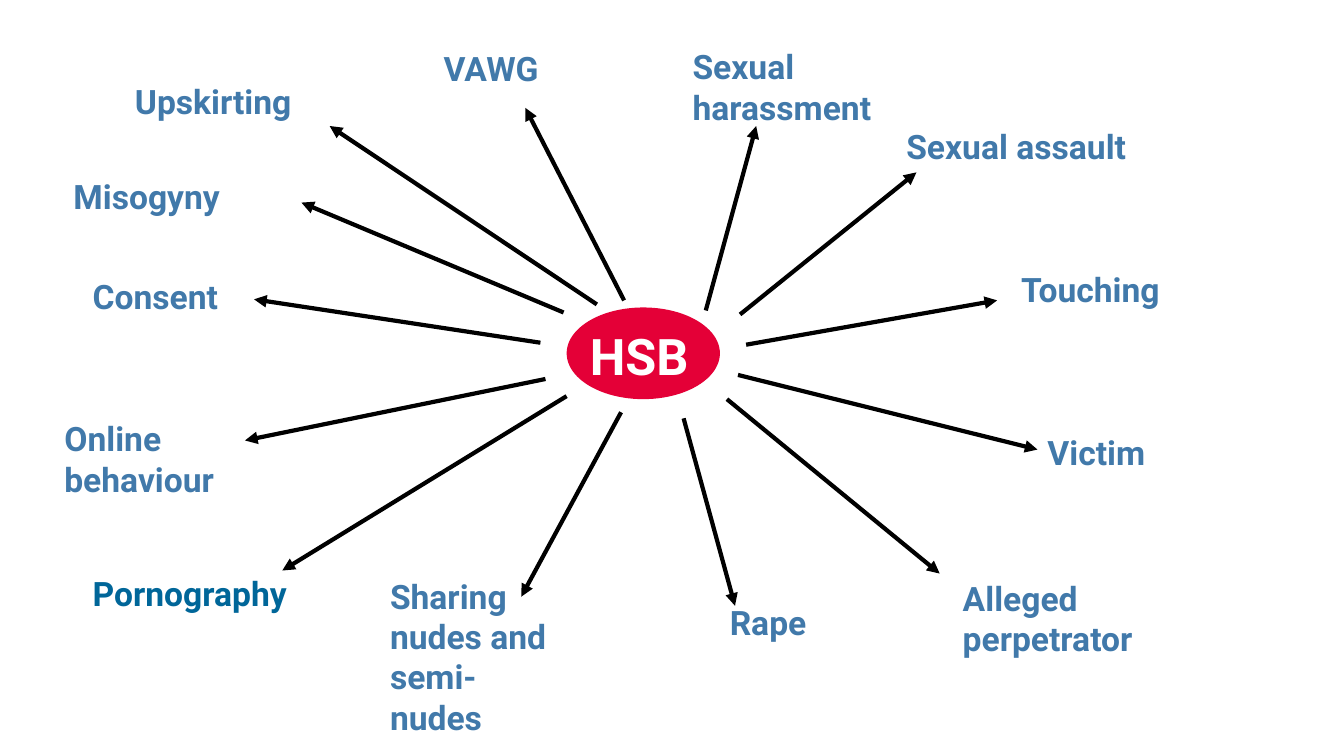
from dataclasses import dataclass
from pptx import Presentation
from pptx.dml.color import RGBColor
from pptx.enum.shapes import MSO_CONNECTOR, MSO_SHAPE
from pptx.enum.text import MSO_ANCHOR
from pptx.oxml.ns import qn
from pptx.util import Pt
from lxml import etree

PX = 9144
STRAIGHT = MSO_CONNECTOR.STRAIGHT
OVAL = MSO_SHAPE.OVAL
TOP, MIDDLE = MSO_ANCHOR.TOP, MSO_ANCHOR.MIDDLE
LINE_HEIGHT, LABEL_PADDING = 41, 9


@dataclass(frozen=True)
class Theme:
    """Colours, font and sizes of the slide."""
    font: str = "Roboto"
    label: str = "4179AA"
    accent: str = "006699"
    hub: str = "E40037"
    hub_text: str = "FFFFFF"
    arrow: str = "000000"
    label_size: int = 24
    hub_size: int = 36
    arrow_width: int = 3


@dataclass(frozen=True)
class Box:
    """A rectangle in px."""
    left: int
    top: int
    width: int
    height: int

    def inner(self, left, top, width, height):
        """Return a box placed relative to this one."""
        return Box(self.left + left, self.top + top, width, height)

    def emu(self):
        """Return left, top, width and height in EMU."""
        return [n * PX for n in (self.left, self.top, self.width, self.height)]


THEME = Theme()
SLIDE_BOX = Box(0, 0, 1333, 750)
HUB_BOX = (562, 305, 152, 91)
HUB_TEXT_BOX = (23, 15, 131, 66)
VAWG_BOX = (440, 48, 144, 55)

LABELS = [
    ("Sexual harassment", 677, 41, 299, 2, THEME.label),
    ("Sexual assault", 889, 120, 342, 1, THEME.label),
    ("Touching", 1003, 262, 225, 1, THEME.label),
    ("Victim", 1029, 424, 139, 1, THEME.label),
    ("Alleged perpetrator", 945, 568, 198, 2, THEME.label),
    ("Rape", 714, 592, 103, 1, THEME.label),
    ("Sharing nudes and semi-nudes", 377, 566, 184, 4, THEME.label),
    ("Pornography", 82, 563, 236, 1, THEME.accent),
    ("Online behaviour", 54, 410, 173, 2, THEME.label),
    ("Consent", 82, 269, 171, 1, THEME.label),
    ("Misogyny", 63, 170, 171, 1, THEME.label),
    ("Upskirting", 124, 75, 200, 1, THEME.label),
]

ARROWS = [
    (700, 308, 750, 125),
    (734, 312, 909, 171),
    (740, 342, 989, 298),
    (732, 372, 1029, 446),
    (721, 396, 932, 569),
    (678, 415, 729, 601),
    (616, 409, 517, 592),
    (562, 393, 280, 566),
    (541, 376, 243, 437),
    (536, 340, 252, 297),
    (559, 310, 299, 201),
    (592, 302, 327, 125),
    (619, 298, 521, 107),
]


def add_text(page, box, text, color, size=THEME.label_size, frame_format=None):
    """Add one bold left-aligned paragraph in the box."""
    frame = page.shapes.add_textbox(*box.emu()).text_frame
    settings = {"word_wrap": True, "vertical_anchor": TOP, **(frame_format or {})}
    for name, value in settings.items():
        setattr(frame, name, value)
    span = frame.paragraphs[0].add_run()
    span.text = text
    for name, value in {"name": THEME.font, "size": Pt(size), "bold": True}.items():
        setattr(span.font, name, value)
    span.font.color.rgb = RGBColor.from_string(color)


def add_arrow(page, box, start_x, start_y, end_x, end_y):
    """Add an arrow between two points relative to the box."""
    arrow = page.shapes.add_connector(
        STRAIGHT,
        (box.left + start_x) * PX, (box.top + start_y) * PX,
        (box.left + end_x) * PX, (box.top + end_y) * PX)
    arrow.line.width = Pt(THEME.arrow_width)
    arrow.line.color.rgb = RGBColor.from_string(THEME.arrow)
    etree.SubElement(arrow.line._get_or_add_ln(), qn("a:tailEnd"), type="triangle")
    etree.SubElement(arrow._element.spPr, qn("a:effectLst"))


def add_hub(page, box):
    """Add the central ellipse with its title."""
    ellipse = page.shapes.add_shape(OVAL, *box.emu())
    ellipse.shadow.inherit = False
    ellipse.fill.solid()
    ellipse.fill.fore_color.rgb = RGBColor.from_string(THEME.hub)
    ellipse.line.fill.background()
    add_text(page, box.inner(*HUB_TEXT_BOX), "HSB", THEME.hub_text, THEME.hub_size,
             {**NO_MARGINS, "vertical_anchor": MIDDLE})


def add_mind_map(page, box):
    """Add the labels, the arrows and the hub inside the box."""
    for text, left, top, width, lines, color in LABELS:
        height = LABEL_PADDING + LINE_HEIGHT * lines
        add_text(page, box.inner(left, top, width, height), text, color)
    add_text(page, box.inner(*VAWG_BOX), "VAWG", THEME.label,
             frame_format={**NO_MARGINS, "word_wrap": False})
    for points in ARROWS:
        add_arrow(page, box, *points)
    add_hub(page, box.inner(*HUB_BOX))


NO_MARGINS = {f"margin_{side}": 0 for side in ("left", "top", "right", "bottom")}


def main():
    """Build the deck and save it."""
    deck = Presentation()
    deck.slide_width, deck.slide_height = SLIDE_BOX.emu()[2:]
    page = deck.slides.add_slide(deck.slide_layouts[6])
    add_mind_map(page, SLIDE_BOX)
    deck.save("out.pptx")


if __name__ == "__main__":
    main()
